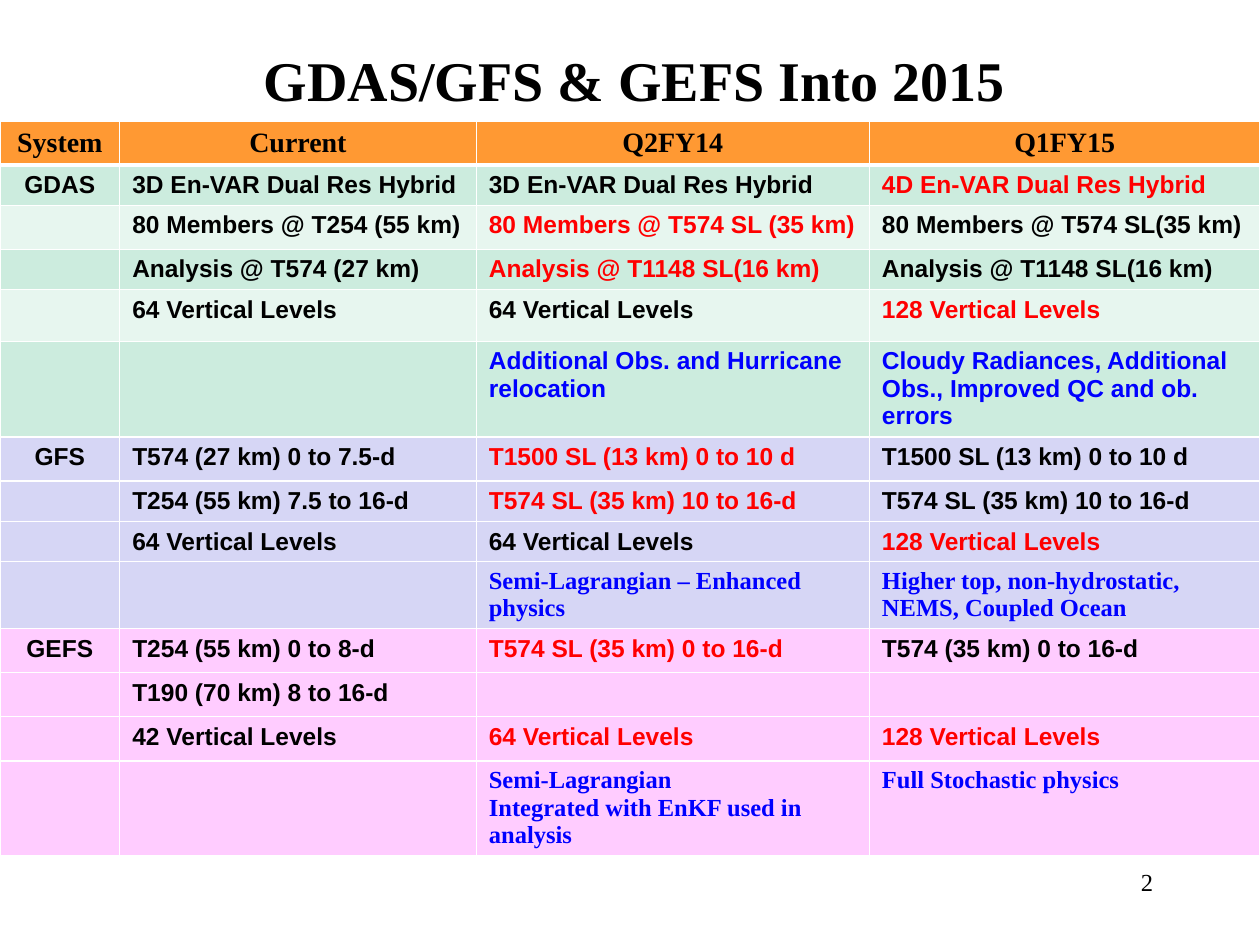
from dataclasses import dataclass

from lxml.etree import SubElement
from pptx import Presentation
from pptx.dml.color import RGBColor
from pptx.enum.text import MSO_ANCHOR, PP_ALIGN
from pptx.oxml.ns import qn
from pptx.util import Inches, Pt


@dataclass(frozen=True)
class Theme:
    serif: str = "Times New Roman"
    sans: str = "Arial"
    title_size: int = 32
    header_size: int = 16
    body_size: int = 14
    black: str = "000000"
    red: str = "FF0000"
    blue: str = "0000FF"
    border: str = "FFFFFF"
    header: str = "FF9933"
    green: str = "CCECDE"
    pale_green: str = "E7F6EF"
    lavender: str = "D6D6F5"
    pink: str = "FFCCFF"


THEME = Theme()


@dataclass(frozen=True)
class TextStyle:
    color: str = THEME.black
    font: str = THEME.sans
    size: int = THEME.body_size
    bold: bool = True


PLAIN = TextStyle()
CHANGED = TextStyle(THEME.red)
NOTE = TextStyle(THEME.blue)
SERIF_NOTE = TextStyle(THEME.blue, THEME.serif)
HEADER = TextStyle(font=THEME.serif, size=THEME.header_size)
TITLE = TextStyle(font=THEME.serif, size=THEME.title_size)
PAGE_NUMBER = TextStyle(font=THEME.serif, bold=False)


def changed(text):
    return text, CHANGED


def note(text):
    return text, NOTE


def serif_note(text):
    return text, SERIF_NOTE


COLUMN_WIDTHS = (0.95, 2.83, 3.12, 3.1)
HEADINGS = ("System", "Current", "Q2FY14", "Q1FY15")

# Each system: name, fills used in turn, then (row height, cells) per row.
SYSTEMS = (
    ("GDAS", (THEME.green, THEME.pale_green), (
        (0.32, ("3D En-VAR Dual Res Hybrid", "3D En-VAR Dual Res Hybrid",
                changed("4D En-VAR Dual Res Hybrid"))),
        (0.35, ("80 Members @ T254 (55 km)", changed("80 Members @ T574 SL (35 km)"),
                "80 Members @ T574 SL(35 km)")),
        (0.32, ("Analysis @ T574 (27 km)", changed("Analysis @ T1148 SL(16 km)"),
                "Analysis @ T1148 SL(16 km)")),
        (0.41, ("64 Vertical Levels", "64 Vertical Levels",
                changed("128 Vertical Levels"))),
        (0.76, ("", note("Additional Obs. and Hurricane relocation"),
                note("Cloudy Radiances, Additional Obs., Improved QC and ob. errors"))),
    )),
    ("GFS", (THEME.lavender,), (
        (0.35, ("T574 (27 km) 0 to 7.5-d", changed("T1500 SL (13 km) 0 to 10 d"),
                "T1500 SL (13 km) 0 to 10 d")),
        (0.32, ("T254 (55 km) 7.5 to 16-d", changed("T574 SL (35 km) 10 to 16-d"),
                "T574 SL (35 km) 10 to 16-d")),
        (0.32, ("64 Vertical Levels", "64 Vertical Levels",
                changed("128 Vertical Levels"))),
        (0.53, ("", serif_note("Semi-Lagrangian – Enhanced physics"),
                serif_note("Higher top, non-hydrostatic, NEMS, Coupled Ocean"))),
    )),
    ("GEFS", (THEME.pink,), (
        (0.35, ("T254 (55 km) 0 to 8-d", changed("T574 SL (35 km) 0 to 16-d"),
                "T574 (35 km) 0 to 16-d")),
        (0.35, ("T190 (70 km) 8 to 16-d", "", "")),
        (0.35, ("42 Vertical Levels", changed("64 Vertical Levels"),
                changed("128 Vertical Levels"))),
        (0.75, ("", serif_note("Semi-Lagrangian\nIntegrated with EnKF used in analysis"),
                serif_note("Full Stochastic physics"))),
    )),
)


def write_text(frame, text, style, alignment):
    frame.text = text
    for para in frame.paragraphs:
        para.alignment = alignment
        para.font.name = style.font
        para.font.size = Pt(style.size)
        para.font.bold = style.bold
        para.font.color.rgb = RGBColor.from_string(style.color)


def add_text(page, position, text, style, alignment, anchor=MSO_ANCHOR.TOP):
    box = page.shapes.add_textbox(*map(Inches, position))
    box.text_frame.word_wrap = True
    box.text_frame.vertical_anchor = anchor
    write_text(box.text_frame, text, style, alignment)


def set_borders(cell, top, bottom):
    """Draw all four sides; top and bottom are widths in points."""
    properties = cell._tc.get_or_add_tcPr()
    for side, width in (("L", 1), ("R", 1), ("T", top), ("B", bottom)):
        line = SubElement(properties, qn(f"a:ln{side}"), w=str(Pt(width)))
        fill = SubElement(line, qn("a:solidFill"))
        SubElement(fill, qn("a:srgbClr"), val=THEME.border)


def table_rows():
    """Yield height, fill and cells for every row, header first."""
    yield 0.35, THEME.header, [(heading, HEADER) for heading in HEADINGS]
    for name, fills, rows in SYSTEMS:
        for index, (height, entries) in enumerate(rows):
            cells = [name if index == 0 else "", *entries]
            yield height, fills[index % len(fills)], [
                (cell, PLAIN) if isinstance(cell, str) else cell for cell in cells]


def add_system_table(page):
    rows = list(table_rows())
    total_height = sum(height for height, _, _ in rows)
    table = page.shapes.add_table(
        len(rows), len(COLUMN_WIDTHS), Inches(0), Inches(0.96),
        Inches(sum(COLUMN_WIDTHS)), Inches(total_height)).table
    for column, width in zip(table.columns, COLUMN_WIDTHS):
        column.width = Inches(width)
    for row_index, (height, fill, entries) in enumerate(rows):
        table.rows[row_index].height = Inches(height)
        for column_index, (text, style) in enumerate(entries):
            cell = table.cell(row_index, column_index)
            # No bottom margin, so that text never stretches its row.
            cell.margin_bottom = Inches(0)
            set_borders(cell, top=3 if row_index == 1 else 1,
                        bottom=3 if row_index == 0 else 1)
            cell.fill.solid()
            cell.fill.fore_color.rgb = RGBColor.from_string(fill)
            centred = row_index == 0 or column_index == 0
            write_text(cell.text_frame, text, style,
                       PP_ALIGN.CENTER if centred else PP_ALIGN.LEFT)


def main():
    deck = Presentation()
    deck.slide_width, deck.slide_height = Inches(10), Inches(7.5)
    page = deck.slides.add_slide(deck.slide_layouts[6])
    add_system_table(page)
    add_text(page, (7.17, 6.83, 2.08, 0.5), "2", PAGE_NUMBER, PP_ALIGN.RIGHT)
    add_text(page, (0.65, 0.12, 8.77, 1.01), "GDAS/GFS & GEFS Into 2015",
             TITLE, PP_ALIGN.CENTER, MSO_ANCHOR.MIDDLE)
    deck.save("out.pptx")


if __name__ == "__main__":
    main()
